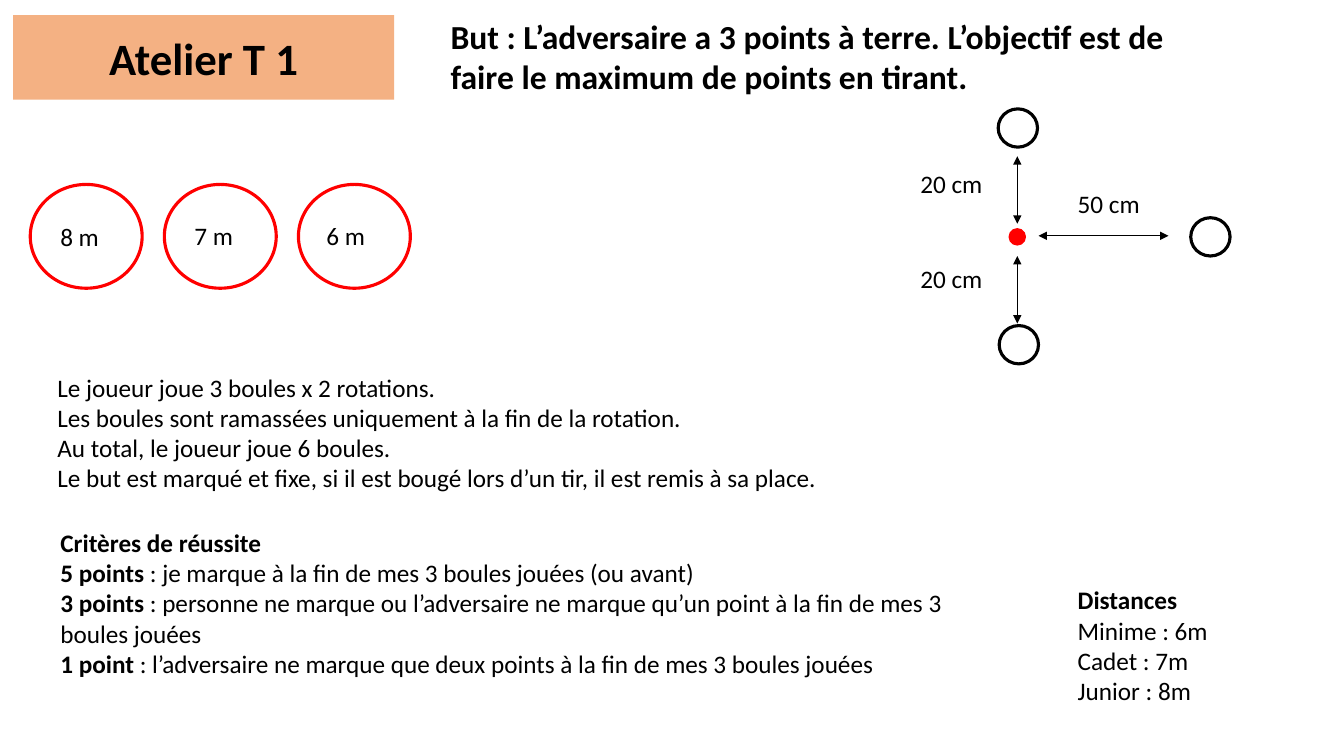
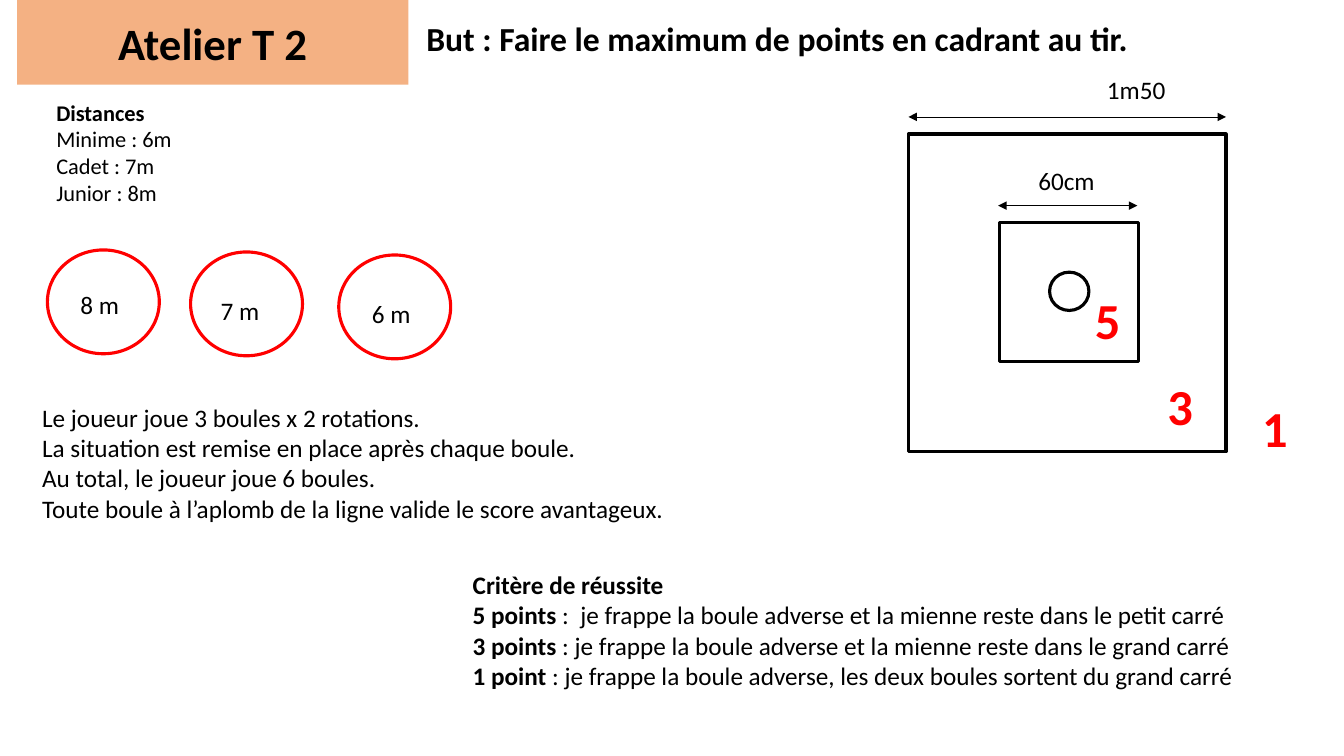
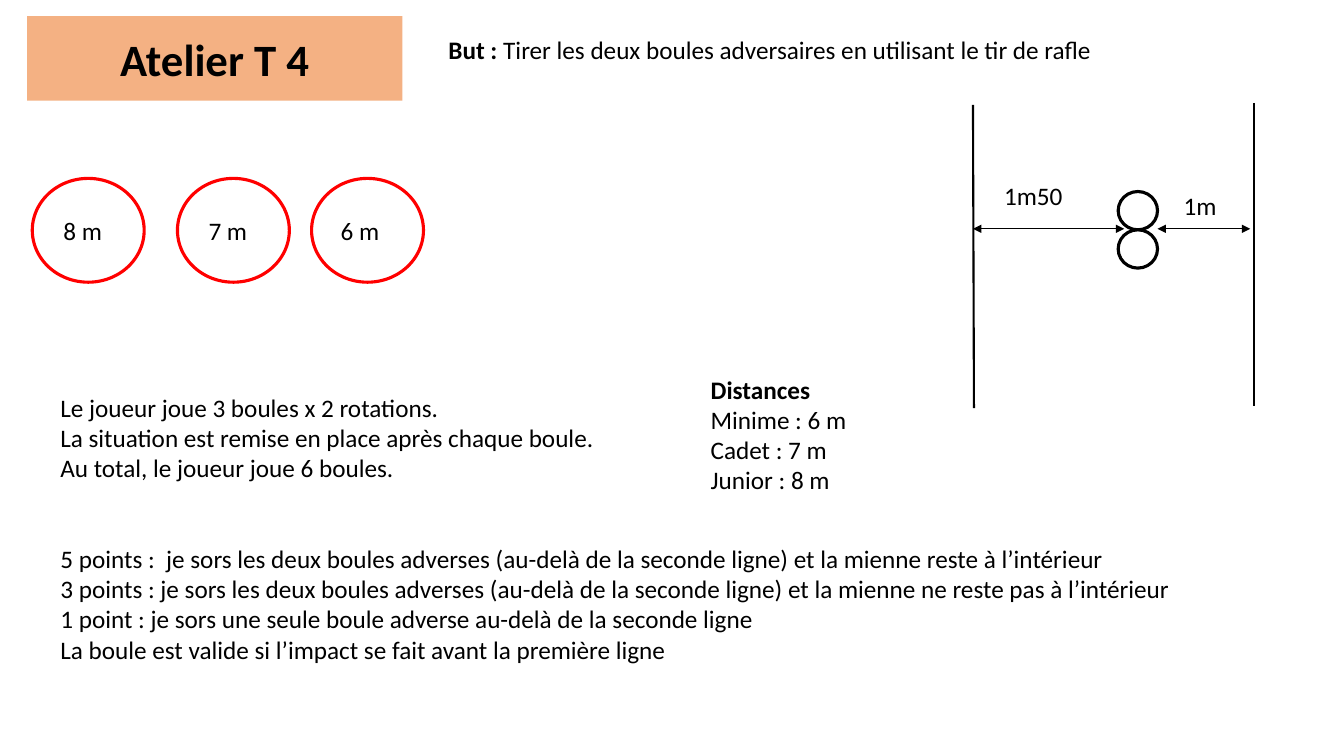
from dataclasses import dataclass

from lxml import etree
from pptx import Presentation
from pptx.dml.color import RGBColor
from pptx.enum.shapes import MSO_CONNECTOR as Connector, MSO_SHAPE as Shape
from pptx.enum.text import MSO_ANCHOR as Anchor, MSO_AUTO_SIZE as AutoSize, PP_ALIGN as Align
from pptx.oxml.ns import qn
from pptx.util import Emu, Pt


@dataclass(frozen=True)
class Theme:
    font: str = "Calibri"
    black: str = "000000"
    white: str = "FFFFFF"
    red: str = "FF0000"
    banner: str = "F4B183"
    title: int = 32
    score: int = 36
    goal: int = 24
    body: int = 18
    small: int = 16
    outline: float = 2.25
    boundary: float = 1.5
    hairline: float = 0.5


THEME = Theme()
SCALE = 9144  # EMU in one px, a hundredth of an inch

# Sentences shared by the workshops
TURNS = "Le joueur joue 3 boules x 2 rotations."
RESET = "La situation est remise en place après chaque boule."
TOTAL = "Au total, le joueur joue 6 boules."


def px(*lengths):
    return [Emu(length * SCALE) for length in lengths]


def rgb(value):
    return RGBColor.from_string(value)


# Text: each paragraph is a pair (bold part, plain part)
def write(frame, paragraphs, size, color, align=Align.LEFT):
    for index, parts in enumerate(paragraphs):
        para = frame.paragraphs[0] if index == 0 else frame.add_paragraph()
        para.alignment = align
        for text, bold in zip(parts, (True, False)):
            if text:
                span = para.add_run()
                span.text = text
                span.font.name = THEME.font
                span.font.size = Pt(size)
                span.font.bold = bold
                span.font.color.rgb = rgb(color)


def add_text(page, at, paragraphs, size=THEME.body, color=THEME.black, align=Align.LEFT):
    frame = page.shapes.add_textbox(*px(*at)).text_frame
    frame.word_wrap = True
    frame.auto_size = AutoSize.SHAPE_TO_FIT_TEXT
    write(frame, paragraphs, size, color, align)


def add_label(page, text, x, y, width):
    add_text(page, (x, y, width, 40), [("", text)])


def plain(*lines):
    return [("", line) for line in lines]


def add_distances(page, at, unit, size=THEME.body):
    rows = (("Minime", 6), ("Cadet", 7), ("Junior", 8))
    lines = plain(*(f"{name} : {metres}{unit}" for name, metres in rows))
    add_text(page, at, [("Distances", "")] + lines, size)


# Shapes
def add_figure(page, kind, at, fill=None, line=None, width=THEME.outline):
    figure = page.shapes.add_shape(kind, *px(*at))
    figure.shadow.inherit = False
    if fill:
        figure.fill.solid()
        figure.fill.fore_color.rgb = rgb(fill)
    else:
        figure.fill.background()
    if line:
        figure.line.color.rgb = rgb(line)
        figure.line.width = Pt(width)
    else:
        figure.line.fill.background()
    return figure


def add_banner(page, at, text):
    frame = add_figure(page, Shape.RECTANGLE, at, fill=THEME.banner).text_frame
    frame.vertical_anchor = Anchor.MIDDLE
    write(frame, [(text, "")], THEME.title, THEME.black, Align.CENTER)


def add_throwing_circles(page, places):
    """Places hold, for each distance, the circle's corner and the label's corner."""
    for metres, (x, y, label_x, label_y) in zip((8, 7, 6), places):
        add_figure(page, Shape.OVAL, (x, y, 111, 103), line=THEME.red)
        add_label(page, f"{metres} m", label_x, label_y, 66)


def add_ball(page, left, top):
    add_figure(page, Shape.OVAL, (left, top, 39, 38), THEME.white, THEME.black)


def add_square(page, left, top, side):
    add_figure(page, Shape.RECTANGLE, (left, top, side, side), line=THEME.black)


def add_score(page, text, left, top):
    add_text(page, (left, top, 75, 71), [(text, "")], THEME.score, THEME.red, Align.CENTER)


# Lines
def add_line(page, ends, width=THEME.boundary):
    line = page.shapes.add_connector(Connector.STRAIGHT, *px(*ends))
    line.line.color.rgb = rgb(THEME.black)
    line.line.width = Pt(width)
    etree.SubElement(line._element.spPr, qn("a:effectLst"))
    return line


def add_dimension(page, *ends):
    outline = add_line(page, ends, THEME.hairline).line._get_or_add_ln()
    for tip in ("a:headEnd", "a:tailEnd"):
        etree.SubElement(outline, qn(tip), type="triangle")


# Slides
def build_three_points(page):
    add_banner(page, (13, 15, 378, 84), "Atelier T 1")
    goal = "But : L’adversaire a 3 points à terre. L’objectif est de faire le maximum de points en tirant."
    add_text(page, (437, 11, 768, 91), [(goal, "")], THEME.goal)
    add_throwing_circles(page, [(30, 183, 50, 215), (163, 183, 183, 214), (296, 183, 314, 214)])

    # Three balls around the jack
    for left, top in ((990, 108), (991, 323), (1181, 216)):
        add_ball(page, left, top)
    add_figure(page, Shape.FLOWCHART_CONNECTOR, (1001, 227, 16, 16), THEME.red, THEME.red, 1)
    for top in (155, 254):
        add_dimension(page, 1009, top + 67, 1009, top)
    add_dimension(page, 1159, 234, 1030, 234)
    for text, x, y in (("20 cm", 903, 162), ("20 cm", 903, 256), ("50 cm", 1059, 182)):
        add_label(page, text, x, y, 98)

    # Rules
    add_text(page, (47, 364, 795, 132), plain(
        TURNS,
        "Les boules sont ramassées uniquement à la fin de la rotation.",
        TOTAL,
        "Le but est marqué et fixe, si il est bougé lors d’un tir, il est remis à sa place.",
    ))
    add_text(page, (50, 518, 929, 162), [
        ("Critères de réussite", ""),
        ("5 points ", ": je marque à la fin de mes 3 boules jouées (ou avant)"),
        ("3 points ", ": personne ne marque ou l’adversaire ne marque qu’un point "
                      "à la fin de mes 3 boules jouées"),
        ("1 point ", ": l’adversaire ne marque que deux points à la fin de mes 3 boules jouées"),
    ])
    add_distances(page, (1059, 575, 209, 131), "m")


def build_squares(page):
    add_banner(page, (17, 0, 388, 84), "Atelier T 2")
    goal = "But : Faire le maximum de points en cadrant au tir."
    add_text(page, (413, 13, 748, 50), [(goal, "")], THEME.goal)
    add_distances(page, (46, 93, 181, 118), "m", THEME.small)
    add_throwing_circles(page, [(47, 248, 70, 282), (189, 250, 209, 288), (336, 253, 359, 291)])

    # Target squares, their sizes and scores
    add_square(page, 901, 133, 315)
    add_square(page, 991, 221, 138)
    add_ball(page, 1041, 270)
    add_dimension(page, 1216, 116, 901, 116)
    add_dimension(page, 1128, 204, 990, 204)
    add_label(page, "1m50", 1088, 69, 90)
    add_label(page, "60cm", 1020, 159, 90)
    for text, left, top in (("5", 1061, 282), ("3", 1133, 367), ("1", 1227, 389)):
        add_score(page, text, left, top)

    # Rules
    add_text(page, (32, 394, 647, 132), plain(
        TURNS, RESET, TOTAL,
        "Toute boule à l’aplomb de la ligne valide le score avantageux.",
    ))
    add_text(page, (459, 560, 817, 132), [
        ("Critère de réussite", ""),
        ("5 points ", ":  je frappe la boule adverse et la mienne reste dans le petit carré"),
        ("3 points ", ": je frappe la boule adverse et la mienne reste dans le grand carré"),
        ("1 point ", ": je frappe la boule adverse, les deux boules sortent du grand carré"),
    ])


def build_two_lines(page):
    add_banner(page, (27, 16, 372, 84), "Atelier T 4")
    goal = "Tirer les deux boules adversaires en utilisant le tir de rafle"
    add_text(page, (435, 29, 787, 40), [("But : ", goal)])
    add_throwing_circles(page, [(32, 177, 53, 209), (176, 177, 197, 209), (309, 177, 328, 209)])

    # Two balls between the boundary lines
    for top in (190, 228):
        add_ball(page, 1109, top)
    add_line(page, (965, 104, 966, 405))
    add_line(page, (1244, 102, 1244, 403))
    add_dimension(page, 1115, 227, 965, 227)
    add_dimension(page, 1240, 227, 1148, 227)
    add_label(page, "1m50", 986, 174, 90)
    add_label(page, "1m", 1164, 184, 65)

    # Rules
    add_text(page, (50, 384, 647, 101), plain(TURNS, RESET, TOTAL))
    add_distances(page, (695, 366, 210, 131), " m")
    shot = "je sors les deux boules adverses (au-delà de la seconde ligne) et la mienne"
    add_text(page, (50, 534, 1171, 131), plain(
        f"5 points :  {shot} reste à l’intérieur",
        f"3 points : {shot} ne reste pas à l’intérieur",
        "1 point : je sors une seule boule adverse au-delà de la seconde ligne",
        "La boule est valide si l’impact se fait avant la première ligne",
    ))


def main():
    deck = Presentation()
    deck.slide_width, deck.slide_height = px(1333, 750)
    for build in (build_three_points, build_squares, build_two_lines):
        build(deck.slides.add_slide(deck.slide_layouts[6]))
    deck.save("out.pptx")


if __name__ == "__main__":
    main()
